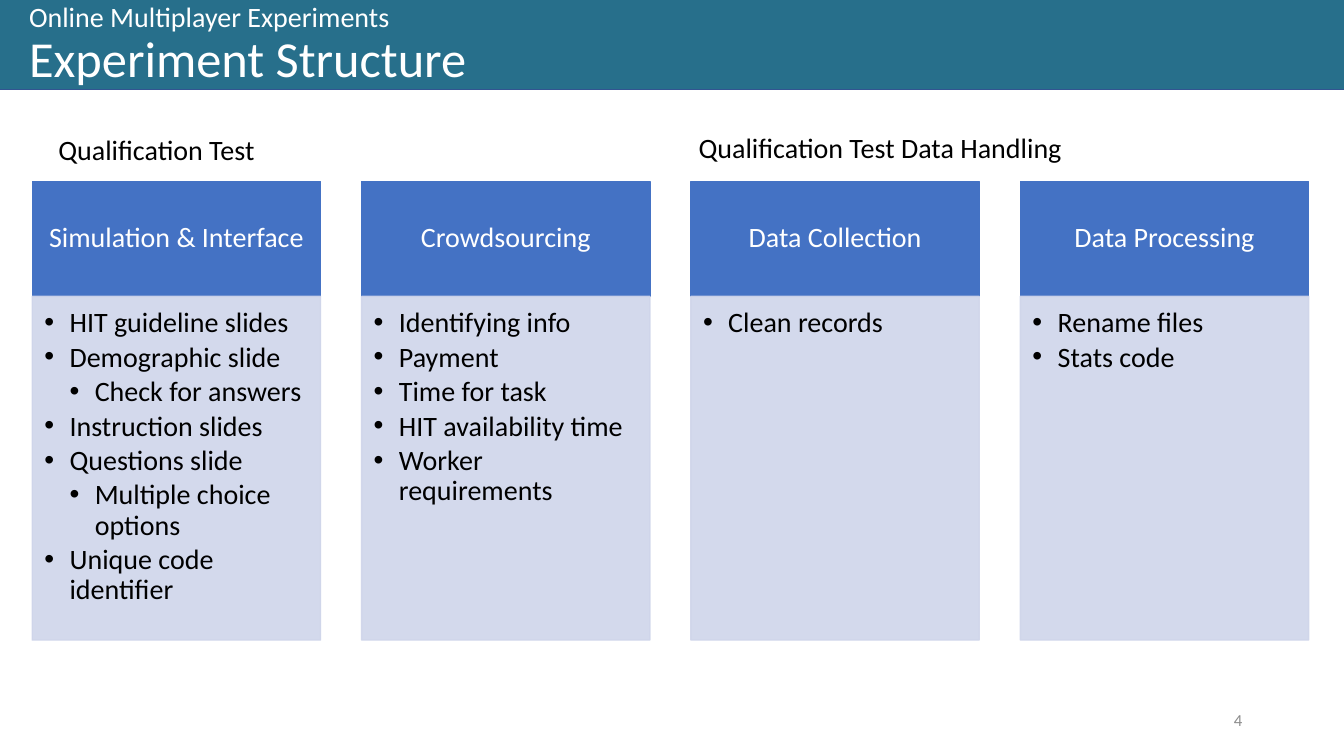
from pptx import Presentation
from pptx.dml.color import RGBColor
from pptx.enum import shapes, text
from pptx.oxml.xmlchemy import OxmlElement
from pptx.util import Inches, Pt

# Content
KICKER, TITLE = "Online Multiplayer Experiments", "Experiment Structure"
PAGE_NUMBER = "4"
SECTIONS = [  # left, top, label
    (0.48, 1.3, "Qualification Test"),
    (6.83, 1.28, "Qualification Test Data Handling"),
]
COLUMNS = [  # heading, [(level, item)]
    ("Simulation & Interface", [
        (1, "HIT guideline slides"), (1, "Demographic slide"),
        (2, "Check for answers"), (1, "Instruction slides"),
        (1, "Questions slide"), (2, "Multiple choice options"),
        (1, "Unique code identifier")]),
    ("Crowdsourcing", [
        (1, "Identifying info"), (1, "Payment"), (1, "Time for task"),
        (1, "HIT availability time"), (1, "Worker requirements")]),
    ("Data Collection", [(1, "Clean records")]),
    ("Data Processing", [(1, "Rename files"), (1, "Stats code")]),
]


class Theme:
    font, bullet_font = "Calibri", "Arial"
    banner, banner_line = "276F8B", "325491"
    heading, panel = "4472C4", "CFD5EA"
    dark, light, muted = "000000", "FFFFFF", "8C8C8C"
    title_size, body_size, number_size = 36, 20, 12
    panel_opacity = 90


# Layout in inches
FIRST_LEFT, LAST_LEFT, COLUMN_WIDTH = 0.32, 10.12, 2.86
COLUMN_PITCH = (LAST_LEFT - FIRST_LEFT) / (len(COLUMNS) - 1)
HEADING_TOP, HEADING_HEIGHT, PANEL_HEIGHT = 1.8, 1.14, 3.41
BULLET_INDENT = 0.25


def set_opacity(color_format, percent):
    alpha = OxmlElement("a:alpha")
    alpha.set("val", str(percent * 1000))
    color_format._xFill.find(".//{*}srgbClr").append(alpha)


def add_box(slide, left, top, width, height, fill, line, opacity=100):
    box = slide.shapes.add_shape(
        shapes.MSO_SHAPE.RECTANGLE, *map(Inches, (left, top, width, height)))
    box.shadow.inherit = False
    box.fill.solid()
    box.fill.fore_color.rgb = RGBColor.from_string(fill)
    box.line.color.rgb = RGBColor.from_string(line)
    box.line.width = Pt(1)
    if opacity < 100:
        for color in (box.fill.fore_color, box.line.color):
            set_opacity(color, opacity)
    return box


def add_text_box(slide, left, top, width, height, anchor):
    frame = slide.shapes.add_textbox(
        *map(Inches, (left, top, width, height))).text_frame
    frame.word_wrap = True
    frame.vertical_anchor = anchor
    return frame


def set_margins(frame, left, top, right, bottom):
    frame.margin_left, frame.margin_top = Inches(left), Inches(top)
    frame.margin_right, frame.margin_bottom = Inches(right), Inches(bottom)


def style(paragraph, color, size=Theme.body_size, align=text.PP_ALIGN.LEFT):
    paragraph.alignment = align
    paragraph.line_spacing = 0.9
    paragraph.font.name = Theme.font
    paragraph.font.size = Pt(size)
    paragraph.font.color.rgb = RGBColor.from_string(color)


def add_bullet(paragraph, level):
    properties = paragraph._p.get_or_add_pPr()
    properties.set("marL", str(Inches(BULLET_INDENT * level)))
    properties.set("indent", str(-Inches(BULLET_INDENT)))
    for tag, key, value in (("a:buFont", "typeface", Theme.bullet_font),
                            ("a:buChar", "char", "•")):
        element = OxmlElement(tag)
        element.set(key, value)
        properties.insert_element_before(element, "a:tabLst", "a:defRPr", "a:extLst")


def add_column(slide, left, heading, items):
    # Heading
    box = add_box(slide, left, HEADING_TOP, COLUMN_WIDTH, HEADING_HEIGHT,
                  Theme.heading, Theme.heading)
    frame = box.text_frame
    set_margins(frame, 0.16, 0.09, 0.16, 0.09)
    frame.text = heading
    style(frame.paragraphs[0], Theme.light, align=text.PP_ALIGN.CENTER)

    # Bulleted panel
    panel = add_box(slide, left, HEADING_TOP + HEADING_HEIGHT, COLUMN_WIDTH,
                    PANEL_HEIGHT, Theme.panel, Theme.panel, Theme.panel_opacity)
    frame = panel.text_frame
    frame.vertical_anchor = text.MSO_ANCHOR.TOP
    set_margins(frame, 0.12, 0.12, 0.16, 0.17)
    frame.text = "\n".join(item for _, item in items)
    for paragraph, (level, _) in zip(frame.paragraphs, items):
        style(paragraph, Theme.dark)
        paragraph.space_after = Pt(3)
        paragraph.level = level
        add_bullet(paragraph, level)


def main():
    presentation = Presentation()
    presentation.slide_width, presentation.slide_height = Inches(13.33), Inches(7.5)
    slide = presentation.slides.add_slide(presentation.slide_layouts[6])

    # Title banner
    add_box(slide, -0.01, -0.01, 13.35, 0.9, Theme.banner, Theme.banner_line)
    frame = add_text_box(slide, 0.19, -0.27, 11.5, 1.45, text.MSO_ANCHOR.MIDDLE)
    paragraph = frame.paragraphs[0]
    style(paragraph, Theme.light, Theme.title_size)
    kicker = paragraph.add_run()
    kicker.text = KICKER
    kicker.font.size = Pt(Theme.body_size)
    paragraph.add_line_break()
    paragraph.add_run().text = TITLE

    # Section labels
    for left, top, label in SECTIONS:
        frame = add_text_box(slide, left, top, 4.53, 0.45, text.MSO_ANCHOR.TOP)
        frame.text = label
        style(frame.paragraphs[0], Theme.dark)

    # Columns
    for index, (heading, items) in enumerate(COLUMNS):
        add_column(slide, FIRST_LEFT + index * COLUMN_PITCH, heading, items)

    # Page number
    frame = add_text_box(slide, 9.42, 6.95, 3, 0.4, text.MSO_ANCHOR.MIDDLE)
    frame.text = PAGE_NUMBER
    style(frame.paragraphs[0], Theme.muted, Theme.number_size, text.PP_ALIGN.RIGHT)

    presentation.save("out.pptx")


if __name__ == "__main__":
    main()
